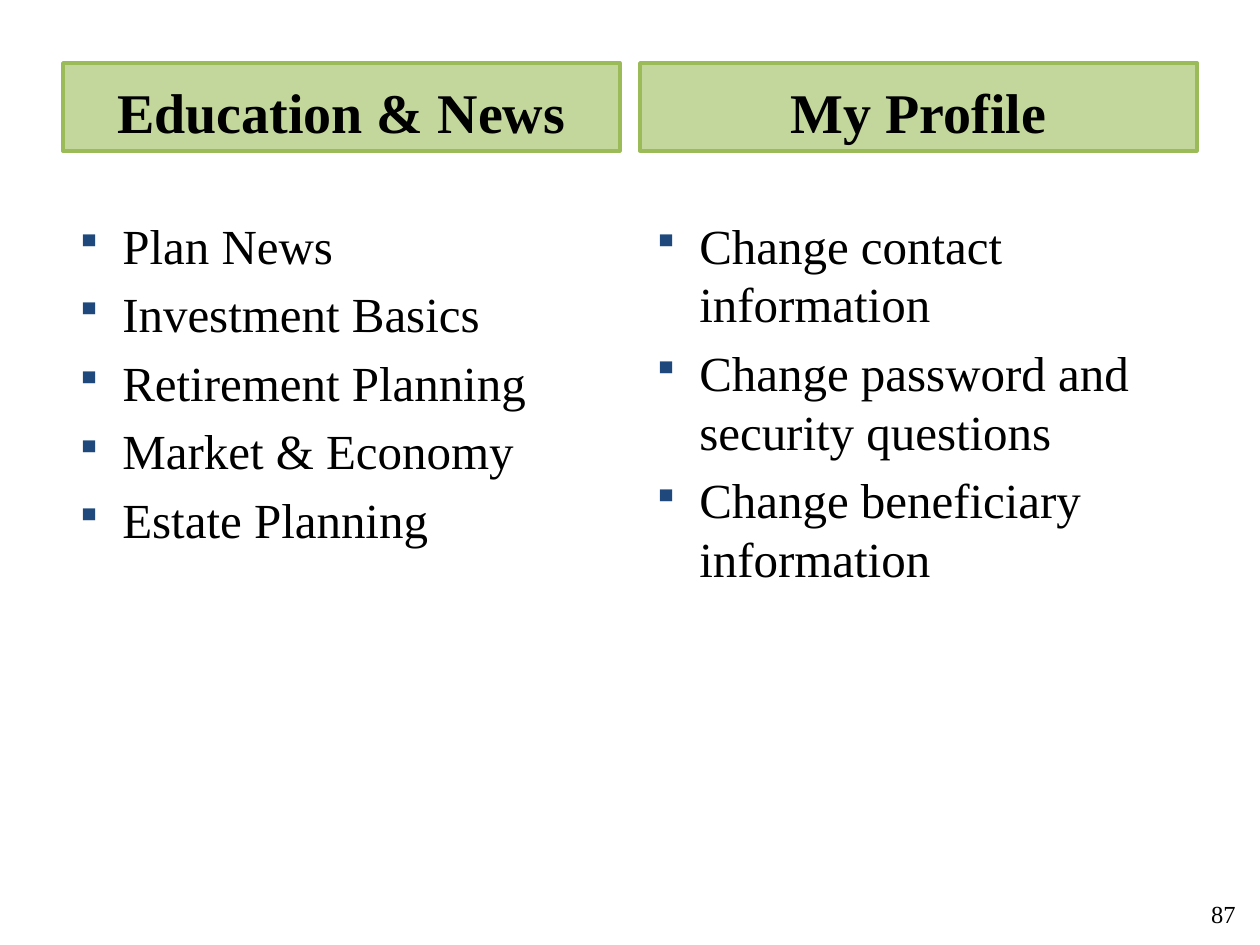
from dataclasses import dataclass

from lxml.etree import SubElement
from pptx import Presentation
from pptx.dml.color import RGBColor
from pptx.enum.shapes import MSO_SHAPE
from pptx.enum.text import MSO_ANCHOR, PP_ALIGN
from pptx.oxml.ns import qn
from pptx.slide import Slide
from pptx.text.text import TextFrame, _Paragraph
from pptx.util import Emu, Pt

PX_PER_INCH = 126


@dataclass(frozen=True)
class Theme:
    font: str = "Times New Roman"
    text: str = "000000"
    bullet: str = "1F497D"
    header_fill: str = "C3D69B"
    header_line: str = "9BBB59"
    header_size: int = 32
    body_size: int = 28
    number_size: int = 14
    line_width: int = 2
    space_before: float = 5.6


@dataclass(frozen=True)
class Box:
    left: int
    top: int
    width: int
    height: int

    def emu(self) -> tuple[Emu, ...]:
        return tuple(px(n) for n in (self.left, self.top, self.width, self.height))


@dataclass(frozen=True)
class Column:
    title: str
    items: tuple[str, ...]


THEME = Theme()
MARGIN, COLUMN_WIDTH, GAP = 63, 557, 20
HEADER_TOP, HEADER_HEIGHT = 63, 88
BODY_TOP, BODY_HEIGHT, BODY_INSET = 199, 645, 16
INDENT = 47
NUMBER_BOX = Box(1194, 893, 54, 42)

COLUMNS = (
    Column("Education & News", (
        "Plan News",
        "Investment Basics",
        "Retirement Planning",
        "Market & Economy",
        "Estate Planning",
    )),
    Column("My Profile", (
        "Change contact information",
        "Change password and security questions",
        "Change beneficiary information",
    )),
)


def px(n: int) -> Emu:
    return Emu(round(n * 914400 / PX_PER_INCH))


def format_text(tf: TextFrame, size: int, bold: bool = False) -> None:
    for p in tf.paragraphs:
        for r in p.runs:
            r.font.name = THEME.font
            r.font.size = Pt(size)
            r.font.bold = bold
            r.font.color.rgb = RGBColor.from_string(THEME.text)


def add_bullet(p: _Paragraph) -> None:
    pPr = p._p.get_or_add_pPr()
    pPr.set("marL", str(px(INDENT)))
    pPr.set("indent", str(-px(INDENT)))
    color = SubElement(pPr, qn("a:buClr"))
    SubElement(color, qn("a:srgbClr"), val=THEME.bullet)
    SubElement(pPr, qn("a:buSzPct"), val="75000")
    SubElement(pPr, qn("a:buChar"), char="▪")


def draw_header(s: Slide, box: Box, title: str) -> None:
    sp = s.shapes.add_shape(MSO_SHAPE.RECTANGLE, *box.emu())
    sp.shadow.inherit = False
    sp.fill.solid()
    sp.fill.fore_color.rgb = RGBColor.from_string(THEME.header_fill)
    sp.line.color.rgb = RGBColor.from_string(THEME.header_line)
    sp.line.width = Pt(THEME.line_width)
    tf = sp.text_frame
    tf.word_wrap = True
    tf.vertical_anchor = MSO_ANCHOR.BOTTOM
    tf.text = title
    tf.paragraphs[0].alignment = PP_ALIGN.CENTER
    format_text(tf, THEME.header_size, bold=True)


def draw_list(s: Slide, box: Box, items: tuple[str, ...]) -> None:
    tf = s.shapes.add_textbox(*box.emu()).text_frame
    tf.word_wrap = True
    tf.margin_top = px(BODY_INSET)
    tf.text = "\n".join(items)
    for i, p in enumerate(tf.paragraphs):
        add_bullet(p)
        p.space_before = Pt(THEME.space_before if i else 0)
    format_text(tf, THEME.body_size)


def draw_number(s: Slide, box: Box, number: str) -> None:
    tf = s.shapes.add_textbox(*box.emu()).text_frame
    tf.word_wrap = False
    tf.vertical_anchor = MSO_ANCHOR.MIDDLE
    tf.text = number
    tf.paragraphs[0].alignment = PP_ALIGN.RIGHT
    format_text(tf, THEME.number_size)


def main() -> None:
    prs = Presentation()
    prs.slide_width, prs.slide_height = px(1260), px(945)
    s = prs.slides.add_slide(prs.slide_layouts[6])
    draw_number(s, NUMBER_BOX, "87")
    for i, column in enumerate(COLUMNS):
        left = MARGIN + i * (COLUMN_WIDTH + GAP)
        draw_list(s, Box(left, BODY_TOP, COLUMN_WIDTH, BODY_HEIGHT), column.items)
        draw_header(s, Box(left, HEADER_TOP, COLUMN_WIDTH, HEADER_HEIGHT), column.title)
    prs.save("out.pptx")


if __name__ == "__main__":
    main()
